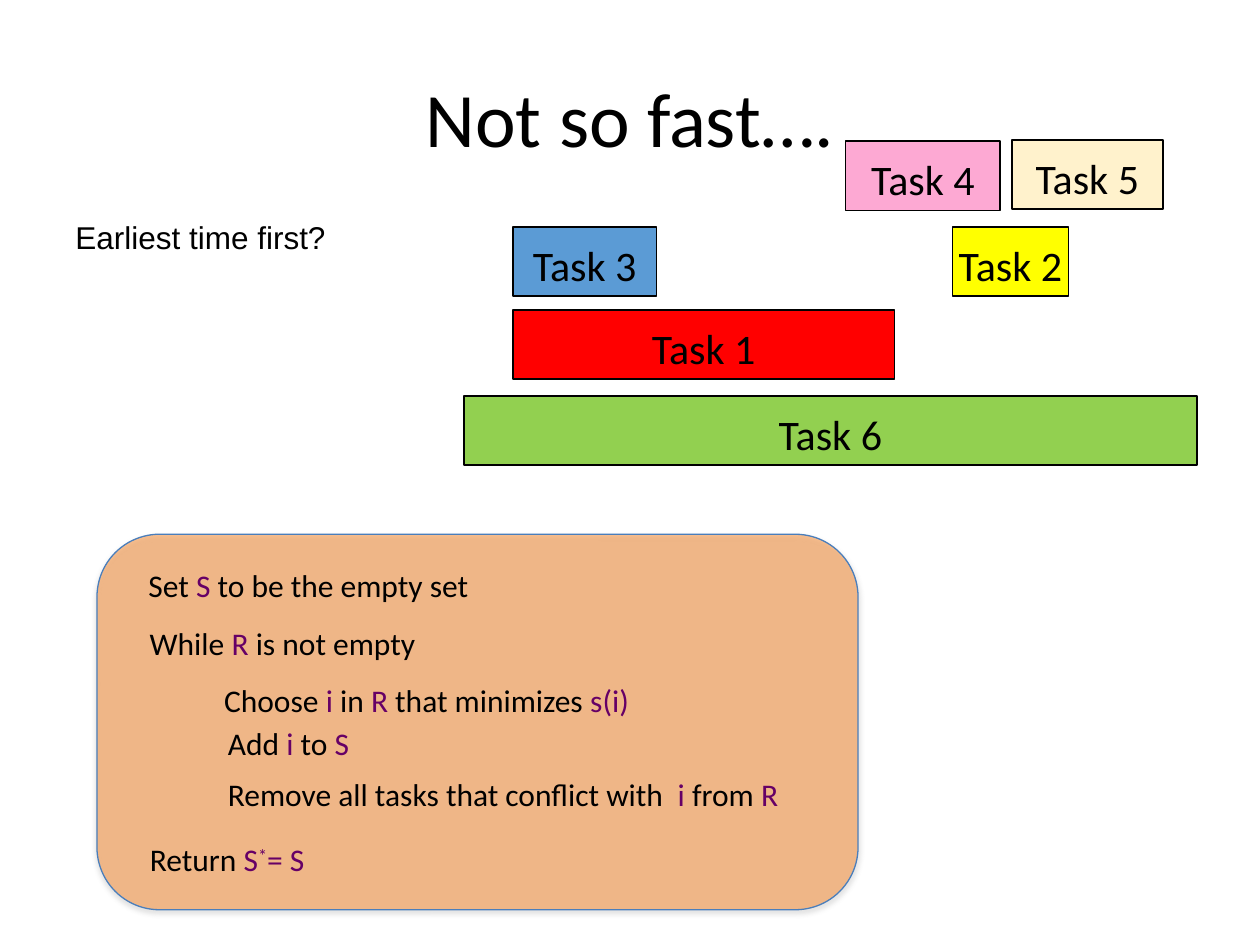
from lxml.etree import SubElement
from pptx import Presentation
from pptx.dml.color import RGBColor
from pptx.enum.shapes import MSO_SHAPE
from pptx.enum.text import MSO_ANCHOR, MSO_AUTO_SIZE, PP_ALIGN
from pptx.oxml.ns import qn
from pptx.util import Inches, Pt

BLACK, PURPLE = "000000", "660066"
ROW_HEIGHT = 0.55

# label, left, top, width, fill; positions are relative to the schedule box
TASKS = [
    ("Task 1", 0.39, 1.35, 3.03, "FF0000"),
    ("Task 2", 3.88, 0.69, 0.92, "FFFF00"),
    ("Task 3", 0.39, 0.69, 1.14, "5B9BD5"),
    ("Task 4", 3.03, 0.01, 1.23, "FDA9D3"),
    ("Task 5", 4.35, 0, 1.2, "FFF2CC"),
    ("Task 6", 0, 2.03, 5.82, "92D050"),
]

# left, top, width, then runs of (text, role); positions are relative to the panel
STEPS = [
    (0.31, 0.2, 2.77, [("Set ", "plain"), ("S", "variable"), (" to be the empty set", "plain")]),
    (0.32, 0.66, 2.33, [("While ", "plain"), ("R", "variable"), (" is not empty", "plain")]),
    (0.91, 1.12, 3.45, [("Choose ", "plain"), ("i", "variable"), (" in ", "plain"),
                        ("R ", "variable"), ("that minimizes ", "plain"), ("s(i)", "variable")]),
    (0.94, 1.46, 1.18, [("Add ", "plain"), ("i", "variable"), (" to ", "plain"), ("S", "variable")]),
    (0.94, 1.86, 4.62, [("Remove all tasks that conflict with  ", "plain"), ("i", "variable"),
                        (" from ", "plain"), ("R", "variable")]),
    (0.32, 2.38, 1.45, [("Return ", "plain"), ("S", "variable"), ("*", "superscript"),
                        ("= S", "variable")]),
]


def rgb(value):
    return RGBColor.from_string(value)


def set_attributes(target, values):
    for name, value in values.items():
        setattr(target, name, value)


def add_run(paragraph, text, role="plain", size=18, font="Calibri"):
    run = paragraph.add_run()
    run.text = text
    set_attributes(run.font, {"name": font, "size": Pt(size)})
    run.font.color.rgb = rgb(BLACK if role == "plain" else PURPLE)
    if role == "superscript":
        run._r.get_or_add_rPr().set("baseline", "30000")


def add_line_of_text(slide, left, top, width, runs, **run_format):
    box = slide.shapes.add_textbox(Inches(left), Inches(top), Inches(width), Inches(0.4))
    set_attributes(box.text_frame, {"word_wrap": False, "auto_size": MSO_AUTO_SIZE.SHAPE_TO_FIT_TEXT})
    for text, role in runs:
        add_run(box.text_frame.paragraphs[0], text, role, **run_format)


def add_filled_shape(slide, preset, left, top, width, height, fill, line, line_width):
    shape = slide.shapes.add_shape(preset, Inches(left), Inches(top), Inches(width), Inches(height))
    shape.shadow.inherit = False
    shape.fill.solid()
    shape.fill.fore_color.rgb = rgb(fill)
    shape.line.color.rgb = rgb(line)
    shape.line.width = Pt(line_width)
    return shape


def add_color_with_alpha(parent, color, percent):
    element = SubElement(parent, qn("a:srgbClr"), val=color)
    SubElement(element, qn("a:alpha"), val=str(percent * 1000))


def place_title(slide, left, top, width, height):
    title = slide.shapes.title
    set_attributes(title, {"left": Inches(left), "top": Inches(top),
                           "width": Inches(width), "height": Inches(height)})
    title.text_frame.vertical_anchor = MSO_ANCHOR.MIDDLE
    paragraph = title.text_frame.paragraphs[0]
    paragraph.alignment = PP_ALIGN.CENTER
    add_run(paragraph, "Not so fast….", size=44)


def add_schedule(slide, left, top):
    for label, dx, dy, width, fill in TASKS:
        bar = add_filled_shape(slide, MSO_SHAPE.RECTANGLE, left + dx, top + dy,
                               width, ROW_HEIGHT, fill, BLACK, 1)
        set_attributes(bar.text_frame, {
            "word_wrap": False, "vertical_anchor": MSO_ANCHOR.MIDDLE,
            "margin_left": 0, "margin_right": 0, "margin_top": Inches(0.05), "margin_bottom": 0,
        })
        paragraph = bar.text_frame.paragraphs[0]
        paragraph.alignment = PP_ALIGN.CENTER
        add_run(paragraph, label, size=24)


def add_algorithm(slide, left, top, width, height):
    panel = add_filled_shape(slide, MSO_SHAPE.ROUNDED_RECTANGLE, left, top, width, height,
                             "F79646", "4A7EBB", 0.75)
    properties = panel._element.spPr
    fill_color = properties.find(qn("a:solidFill")).find(qn("a:srgbClr"))
    SubElement(fill_color, qn("a:alpha"), val="59000")
    shadow = SubElement(properties.find(qn("a:effectLst")), qn("a:outerShdw"),
                        blurRad=str(Pt(3.1)), dist=str(Pt(1.8)), dir="5400000", rotWithShape="0")
    add_color_with_alpha(shadow, "808080", 35)
    for dx, dy, step_width, runs in STEPS:
        add_line_of_text(slide, left + dx, top + dy, step_width, runs)


def main():
    deck = Presentation()
    deck.slide_width, deck.slide_height = Inches(10), Inches(7.5)
    slide = deck.slides.add_slide(deck.slide_layouts[5])
    place_title(slide, 0.5, 0.3, 9, 1.25)
    add_algorithm(slide, 0.77, 4.24, 6.04, 2.98)
    add_line_of_text(slide, 0.5, 1.68, 2.21, [("Earliest time first?", "plain")], font="Arial")
    add_schedule(slide, 3.68, 1.11)
    deck.save("out.pptx")


if __name__ == "__main__":
    main()
